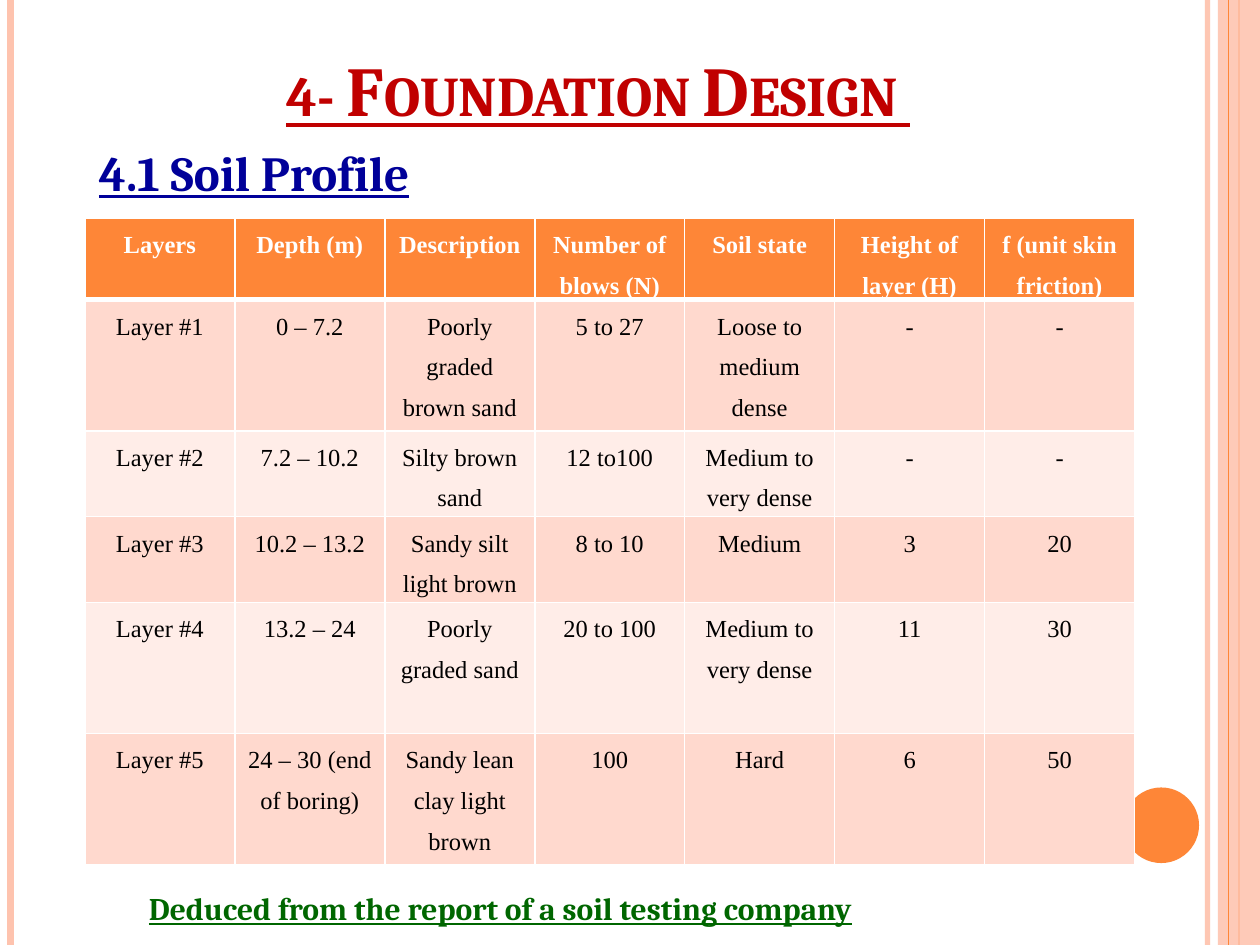
import dataclasses
import pptx
import pptx.dml.color
import pptx.enum.shapes
import pptx.enum.text
import pptx.oxml.ns
import pptx.util
from lxml import etree

Pt = pptx.util.Pt
qn = pptx.oxml.ns.qn
ALIGN = pptx.enum.text.PP_ALIGN
ANCHOR = pptx.enum.text.MSO_ANCHOR
SHAPE = pptx.enum.shapes.MSO_SHAPE


@dataclasses.dataclass(frozen=True)
class Theme:
    head: str = "Cambria"
    body: str = "Times New Roman"
    red: str = "C00000"
    navy: str = "000099"
    green: str = "006600"
    orange: str = "FE8637"
    peach: str = "FEC3AE"
    bands: tuple = ("FFD9CE", "FFEDE8")
    white: str = "FFFFFF"
    black: str = "000000"
    title: int = 40
    sub: int = 28
    note: int = 18
    cell: int = 14


THEME = Theme()
ROWS = [
    ["Layers", "Depth (m)", "Description", "Number of blows (N)",
     "Soil state", "Height of layer (H)", "f (unit skin friction)"],
    ["Layer #1", "0 – 7.2", "Poorly graded brown sand", "5 to 27",
     "Loose to medium dense", "-", "-"],
    ["Layer #2", "7.2 – 10.2", "Silty brown sand", "12 to100",
     "Medium to very dense", "-", "-"],
    ["Layer #3", "10.2 – 13.2", "Sandy silt light brown", "8 to 10",
     "Medium", "3", "20"],
    ["Layer #4", "13.2 – 24", "Poorly graded sand", "20 to 100",
     "Medium to very dense", "11", "30"],
    ["Layer #5", "24 – 30 (end of boring)", "Sandy lean clay light brown",
     "100", "Hard", "6", "50"],
]
HEIGHTS = [38, 75, 49, 49, 75, 75]


def rgb(code):
    return pptx.dml.color.RGBColor.from_string(code)


def paint(fill, code):
    fill.solid()
    fill.fore_color.rgb = rgb(code)


def fade(part, share):
    """Set the opacity, in percent, of the first colour in a shape."""
    color = part._element.spPr.find(".//" + qn("a:srgbClr"))
    etree.SubElement(color, qn("a:alpha"), val=str(share * 1000))


def style(para, name, size, code, bold=True, under=False):
    for run in para.runs:
        font = run.font
        font.name, font.size, font.bold = name, Pt(size), bold
        font.underline = under
        font.color.rgb = rgb(code)


def stripe(slide, x, top, high, width, code):
    line = slide.shapes.add_connector(
        pptx.enum.shapes.MSO_CONNECTOR.STRAIGHT,
        Pt(x), Pt(top), Pt(x), Pt(top + high))
    line.line.width = Pt(width)
    line.line.color.rgb = rgb(code)
    etree.SubElement(line._element.spPr, qn("a:effectLst"))
    return line


def solid(slide, kind, box, code):
    part = slide.shapes.add_shape(kind, *map(Pt, box))
    part.shadow.inherit = False
    paint(part.fill, code)
    part.line.fill.background()
    return part


def decor(slide, box):
    left, top, wide, high = box
    right = left + wide
    # Pale stripes near both edges
    fade(stripe(slide, right - 30, top, high, 3, THEME.peach), 93)
    stripe(slide, left + 6, top, high, 4.5, THEME.peach)
    # Right band with its thin lines, and the dot beside it
    stripe(slide, right - 12, top, high, 1.5, THEME.orange)
    band = solid(slide, SHAPE.RECTANGLE, (right - 24, top, 24, high),
                 THEME.peach)
    fade(band, 87)
    stripe(slide, right - 18, top, high, 0.75, THEME.orange)
    solid(slide, SHAPE.OVAL, (right - 78, top + high - 90, 43.2, 43.2),
          THEME.orange)


def heading(slide, box):
    title = slide.shapes.title
    title.left, title.top, title.width, title.height = map(Pt, box)
    frame = title.text_frame
    frame.text = "4- Foundation Design "
    frame.word_wrap = True
    frame.auto_size = pptx.enum.text.MSO_AUTO_SIZE.NONE
    frame.vertical_anchor = ANCHOR.BOTTOM
    para = frame.paragraphs[0]
    para.alignment = ALIGN.CENTER
    style(para, THEME.head, THEME.title, THEME.red, under=True)
    para.runs[0].font._element.set("cap", "small")


def label(slide, box, text, size, code):
    frame = slide.shapes.add_textbox(*map(Pt, box)).text_frame
    frame.word_wrap = True
    frame.text = text
    style(frame.paragraphs[0], THEME.head, size, code, under=True)


def border(cell, sides):
    props = cell._tc.get_or_add_tcPr()
    for side, width in sides.items():
        line = etree.SubElement(props, qn("a:ln" + side), w=str(Pt(width)))
        fill = etree.SubElement(line, qn("a:solidFill"))
        etree.SubElement(fill, qn("a:srgbClr"), val=THEME.white)


def layers(slide, box):
    left, top, wide, high = box
    count = len(ROWS[0])
    table = slide.shapes.add_table(
        len(ROWS), count, *map(Pt, box)).table
    for col in table.columns:
        col.width = Pt(wide / count)
    for i, texts in enumerate(ROWS):
        table.rows[i].height = Pt(HEIGHTS[i])
        head = i == 0
        back = THEME.orange if head else THEME.bands[(i - 1) % 2]
        ink = THEME.white if head else THEME.black
        sides = {"L": 1, "R": 1, "T": 3 if i == 1 else 1, "B": 3 if head else 1}
        for j, text in enumerate(texts):
            cell = table.cell(i, j)
            border(cell, sides)
            paint(cell.fill, back)
            cell.margin_left = cell.margin_right = Pt(5)
            cell.margin_top = cell.margin_bottom = 0
            cell.text_frame.text = text
            para = cell.text_frame.paragraphs[0]
            para.alignment = ALIGN.CENTER
            para.line_spacing = 1.5
            style(para, THEME.body, THEME.cell, ink, bold=head)


def main():
    deck = pptx.Presentation()
    deck.slide_width, deck.slide_height = Pt(720), Pt(540)
    slide = deck.slides.add_slide(deck.slide_layouts[5])
    paint(slide.background.fill, THEME.white)
    decor(slide, (0, 0, 720, 540))
    heading(slide, (48, -6, 588, 84))
    layers(slide, (48.5, 124.8, 600, sum(HEIGHTS)))
    label(slide, (49.5, 78, 282, 41), "4.1 Soil Profile",
          THEME.sub, THEME.navy)
    label(slide, (78, 504.7, 624, 29),
          "Deduced from the report of a soil testing company",
          THEME.note, THEME.green)
    deck.save("out.pptx")


if __name__ == "__main__":
    main()
